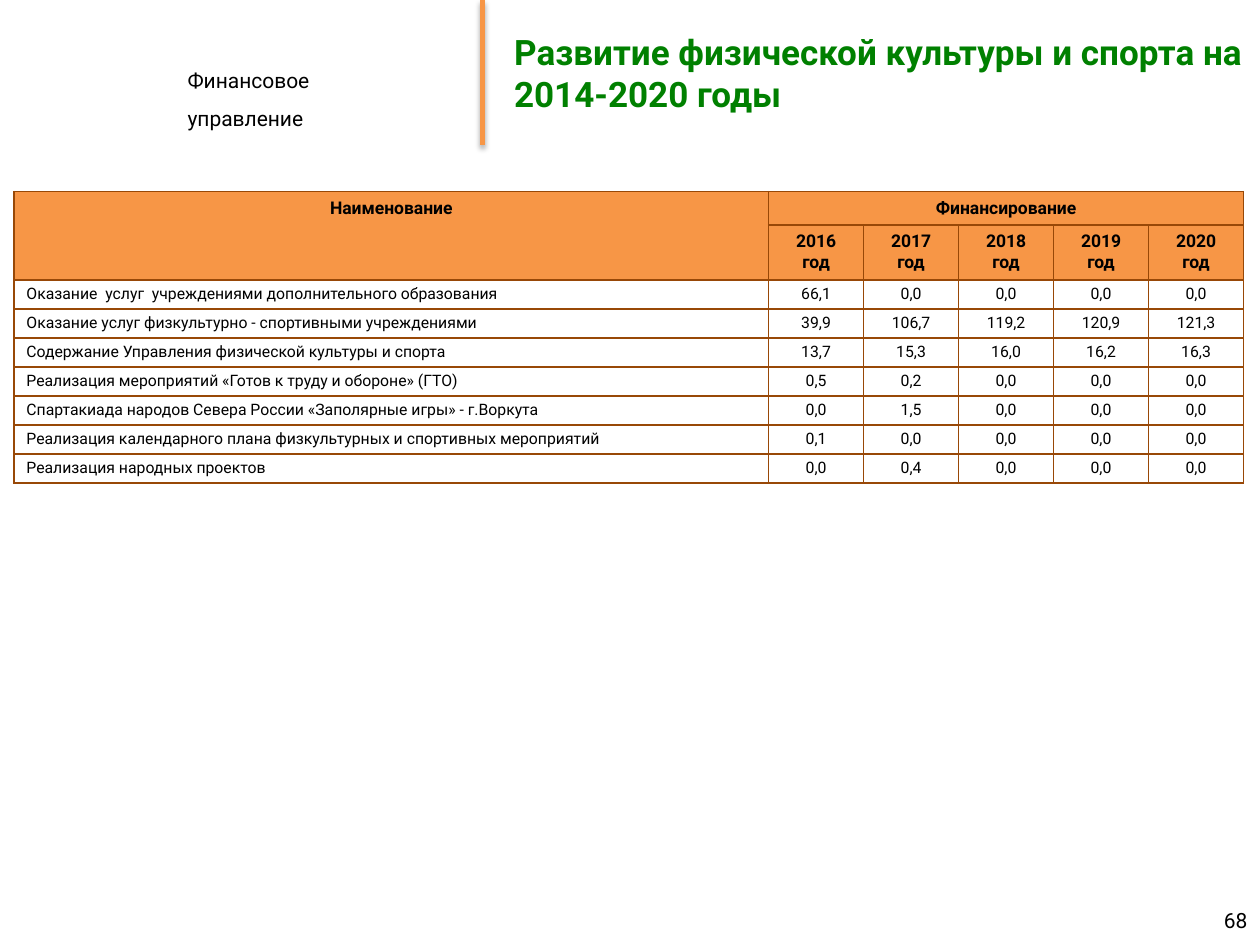
from lxml.etree import SubElement
from pptx import Presentation
from pptx.dml.color import RGBColor
from pptx.enum.shapes import MSO_CONNECTOR as Link
from pptx.enum.text import MSO_ANCHOR as Anchor, MSO_AUTO_SIZE as Fit, PP_ALIGN as Align
from pptx.oxml import parse_xml
from pptx.oxml.ns import nsdecls, qn
from pptx.util import Inches, Pt

COLORS = {"text": "000000", "title": "008000", "head": "F79646",
          "cell": "FFFFFF", "edge": "984807"}


def style(frame, size, color="text", bold=False, align=Align.LEFT):
    form = {"name": "Roboto", "size": Pt(size), "bold": bold}
    for para in frame.paragraphs:
        para.alignment = align
        for run in para.runs:
            for key, value in form.items():
                setattr(run.font, key, value)
            run.font.color.rgb = RGBColor.from_string(COLORS[color])


def border(cell):
    props = cell._tc.get_or_add_tcPr()
    for side in ("lnL", "lnR", "lnT", "lnB"):
        line = SubElement(props, qn(f"a:{side}"), w=str(Pt(1)))
        fill = SubElement(line, qn("a:solidFill"))
        SubElement(fill, qn("a:srgbClr"), val=COLORS["edge"])


deck = Presentation()
deck.slide_width, deck.slide_height = Inches(10), Inches(7.5)
slide = deck.slides.add_slide(deck.slide_layouts[5])
shapes = slide.shapes

# Department label
label = shapes.add_textbox(Inches(1.39), Inches(0.39), Inches(2.1), Inches(0.7))
frame = label.text_frame
frame.word_wrap = True
frame.margin_right = Inches(0.3)
frame.text = "Финансовое управление"
frame.paragraphs[0].line_spacing = 1.5
style(frame, 12)

# Divider with a soft shadow
rule = shapes.add_connector(Link.STRAIGHT, Inches(3.83), 0, Inches(3.83), Inches(1.15))
rule.line.color.rgb = RGBColor.from_string(COLORS["head"])
rule.line.width = Pt(3)
rule._element.spPr.append(parse_xml(
    f'<a:effectLst {nsdecls("a")}><a:outerShdw blurRad="{Pt(3.1)}" dist="{Pt(1.8)}" '
    'dir="5400000" rotWithShape="0"><a:srgbClr val="000000"><a:alpha val="35000"/>'
    '</a:srgbClr></a:outerShdw></a:effectLst>'))

# Title
title = shapes.title
title.left, title.top = Inches(3.98), 0
title.width, title.height = Inches(6.02), Inches(1.15)
frame = title.text_frame
frame.text = "Развитие физической культуры и спорта на 2014-2020 годы"
frame.auto_size = Fit.NONE
frame.vertical_anchor = Anchor.MIDDLE
style(frame, 20, "title", True)

# Page number
page = shapes.add_textbox(Inches(7.67), Inches(7.1), Inches(2.33), Inches(0.4))
frame = page.text_frame
frame.word_wrap = True
frame.vertical_anchor = Anchor.MIDDLE
frame.text = "68"
style(frame, 12, align=Align.RIGHT)

# Funding table
rows = [
    ("Наименование", "Финансирование", "", "", "", ""),
    ("", "2016\nгод", "2017 год", "2018 год", "2019 год", "2020 год"),
    ("Оказание  услуг  учреждениями дополнительного образования",
     "66,1", "0,0", "0,0", "0,0", "0,0"),
    ("Оказание услуг физкультурно - спортивными учреждениями",
     "39,9", "106,7", "119,2", "120,9", "121,3"),
    ("Содержание Управления физической культуры и спорта",
     "13,7", "15,3", "16,0", "16,2", "16,3"),
    ("Реализация мероприятий «Готов к труду и обороне» (ГТО)",
     "0,5", "0,2", "0,0", "0,0", "0,0"),
    ("Спартакиада народов Севера России «Заполярные игры» - г.Воркута",
     "0,0", "1,5", "0,0", "0,0", "0,0"),
    ("Реализация календарного плана физкультурных и спортивных мероприятий",
     "0,1", "0,0", "0,0", "0,0", "0,0"),
    ("Реализация народных проектов", "0,0", "0,4", "0,0", "0,0", "0,0"),
]
heads, years = 2, 5
wide, first = 9.76, 5.99
table = shapes.add_table(len(rows), years + 1, Inches(0.11), Inches(1.52),
                         Inches(wide), Inches(2.27)).table
table.horz_banding = False
for c, col in enumerate(table.columns):
    col.width = Inches((wide - first) / years if c else first)

inset = {"margin_left": Inches(0.1), "margin_right": Inches(0.1),
         "margin_top": Inches(0.04), "margin_bottom": Inches(0.04),
         "vertical_anchor": Anchor.MIDDLE}
for r, row in enumerate(rows):
    head = r < heads
    table.rows[r].height = Inches((0.26, 0.43)[r] if head else 0.22)
    for c, text in enumerate(row):
        cell = table.cell(r, c)
        cell.text = text
        border(cell)
        cell.fill.solid()
        cell.fill.fore_color.rgb = RGBColor.from_string(COLORS["head" if head else "cell"])
        if not head:
            for key, value in inset.items():
                setattr(cell, key, value)
        style(cell.text_frame, 10 if head else 9, bold=head,
              align=Align.CENTER if head or c else Align.LEFT)

table.cell(0, 0).merge(table.cell(1, 0))
table.cell(0, 1).merge(table.cell(0, years))

deck.save("out.pptx")
